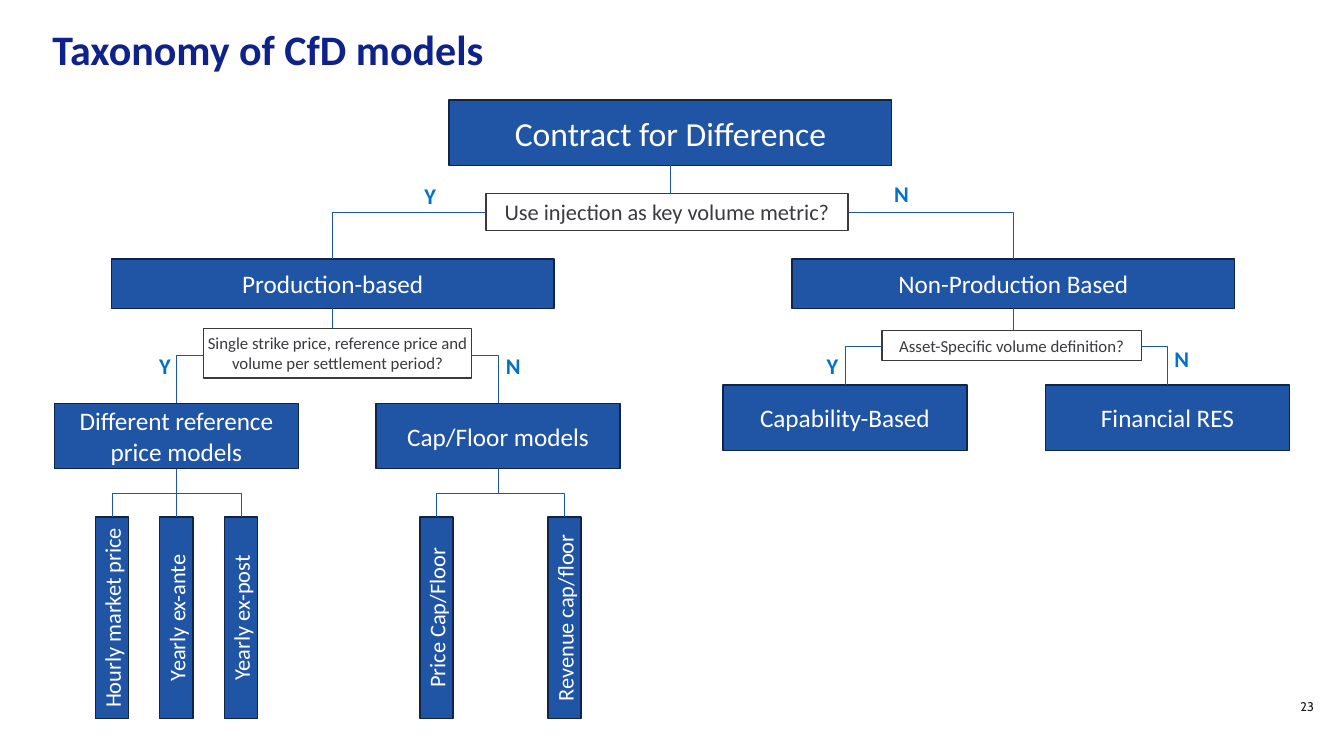
import pptx
import pptx.util
import pptx.dml.color
import pptx.enum.shapes
import pptx.enum.text
from pptx.util import Inches

TITLE = "Taxonomy of CfD models"
PAGE_NUMBER = "23"
FONT = "Calibri"
COLORS = {
    "title": "0F218B", "box": "2054A5", "box_line": "0E2548", "box_text": "FFFFFF",
    "question": "FFFFFF", "question_line": "3A3A3A", "question_text": "3A3A3F",
    "answer": "0073C8", "number": "1D1D20",
}

# level: width and height as seen, font size, rotation
LEVELS = {
    "root": (4.39, 0.65, 24, 0),
    "branch": (4.39, 0.49, 18, 0),
    "model": (2.42, 0.65, 18, 0),
    "variant": (0.33, 2, 16, 270),
}
# text, level, centre x, top, parent
NODES = [
    ("Contract for Difference", "root", 6.65, 0.99, None),
    ("Production-based", "branch", 3.3, 2.57, "Contract for Difference"),
    ("Non-Production Based", "branch", 10.05, 2.57, "Contract for Difference"),
    ("Different reference price models", "model", 1.75, 4, "Production-based"),
    ("Cap/Floor models", "model", 4.94, 4, "Production-based"),
    ("Capability-Based", "model", 8.38, 3.82, "Non-Production Based"),
    ("Financial RES", "model", 11.58, 3.82, "Non-Production Based"),
    ("Hourly market price", "variant", 1.11, 5.13, "Different reference price models"),
    ("Yearly ex-ante", "variant", 1.75, 5.13, "Different reference price models"),
    ("Yearly ex-post", "variant", 2.39, 5.13, "Different reference price models"),
    ("Price Cap/Floor", "variant", 4.33, 5.13, "Cap/Floor models"),
    ("Revenue cap/floor", "variant", 5.6, 5.13, "Cap/Floor models"),
]
# text, box, font size, inset (None keeps the default), (Y left, top), (N left, top)
QUESTIONS = [
    ("Use injection as key volume metric?", (4.82, 1.92, 3.59, 0.37), 16, None,
     (4.11, 1.76), (8.77, 1.74)),
    ("Single strike price, reference price and volume per settlement period?",
     (2.02, 3.26, 2.66, 0.49), 12, 0.04, (1.48, 3.44), (4.92, 3.44)),
    ("Asset-Specific volume definition?", (8.75, 3.28, 2.57, 0.3), 12, None,
     (8.1, 3.44), (11.55, 3.38)),
]

ALIGN = pptx.enum.text.PP_ALIGN
ANCHOR = pptx.enum.text.MSO_ANCHOR


def color(name):
    return pptx.dml.color.RGBColor.from_string(COLORS[name])


def write(shape, text, size, color_name, align, bold=False, font=FONT):
    paragraph = shape.text_frame.paragraphs[0]
    paragraph.alignment = align
    run = paragraph.add_run()
    run.text = text
    run.font.name = font
    run.font.size = pptx.util.Pt(size)
    run.font.bold = bold
    run.font.color.rgb = color(color_name)
    return paragraph


def add_box(slide, box, text, size, style):
    shape = slide.shapes.add_shape(pptx.enum.shapes.MSO_SHAPE.RECTANGLE, *map(Inches, box))
    shape.shadow.inherit = False
    shape.fill.solid()
    shape.fill.fore_color.rgb = color(style)
    shape.line.color.rgb = color(style + "_line")
    shape.line.width = pptx.util.Pt(1)
    shape.text_frame.word_wrap = True
    write(shape, text, size, style + "_text", ALIGN.CENTER)
    return shape


def add_text(slide, box, *style, wrap, **options):
    shape = slide.shapes.add_textbox(*map(Inches, box))
    shape.text_frame.word_wrap = wrap
    write(shape, *style, **options)
    return shape


def add_node(slide, text, level, centre, top):
    width, height, size, rotation = LEVELS[level]
    middle = top + height / 2
    if rotation:
        width, height = height, width
    shape = add_box(slide, (centre - width / 2, middle - height / 2, width, height),
                    text, size, "box")
    shape.rotation = rotation
    return shape


def add_branch(slide, parent, child, start, end):
    """Draw an elbow that leaves the parent downwards: a sideways elbow, turned."""
    (x1, y1), (x2, y2) = start, end
    connector = slide.shapes.add_connector(
        pptx.enum.shapes.MSO_CONNECTOR.ELBOW, 0, 0, 0, 0)
    connector.begin_connect(parent, 2)
    connector.end_connect(child, 3 if child.rotation else 0)
    centre_x, centre_y = (x1 + x2) / 2, (y1 + y2) / 2
    side = 1 if x2 < x1 else -1
    half_width, half_height = side * (y2 - y1) / 2, abs(x2 - x1) / 2
    connector.begin_x = Inches(centre_x - half_width)
    connector.begin_y = Inches(centre_y - half_height)
    connector.end_x = Inches(centre_x + half_width)
    connector.end_y = Inches(centre_y + half_height)
    properties = connector._element.spPr
    properties.xfrm.set("rot", str(60000 * (90 if side == 1 else 270)))
    connector.line.color.rgb = color("box")
    connector.line.width = pptx.util.Pt(0.5)
    properties.append(pptx.oxml.parse_xml(
        '<a:effectLst xmlns:a="http://schemas.openxmlformats.org/drawingml/2006/main"/>'))


def add_question(slide, text, box, size, inset, yes, no):
    frame = add_box(slide, box, text, size, "question").text_frame
    frame.vertical_anchor = ANCHOR.TOP
    frame.auto_size = pptx.enum.text.MSO_AUTO_SIZE.SHAPE_TO_FIT_TEXT
    if inset is not None:
        frame.margin_left = frame.margin_right = Inches(inset)
        frame.margin_top = frame.margin_bottom = Inches(inset)
    for answer, place, width in (("Y", yes, 0.32), ("N", no, 0.35)):
        add_text(slide, (*place, width, 0.37), answer, 16, "answer", ALIGN.LEFT,
                 wrap=False, bold=True)


def main():
    presentation = pptx.Presentation()
    presentation.slide_width, presentation.slide_height = Inches(13.33), Inches(7.5)
    slide = presentation.slides.add_slide(presentation.slide_layouts[5])

    title = slide.shapes.title
    title.left, title.top, title.width, title.height = map(Inches, (0.42, 0.32, 12.71, 0.39))
    title.text_frame.vertical_anchor = ANCHOR.MIDDLE
    title.text_frame.auto_size = pptx.enum.text.MSO_AUTO_SIZE.NONE
    paragraph = write(title, TITLE, 30, "title", ALIGN.LEFT, bold=True)
    paragraph.line_spacing = pptx.util.Pt(32)

    shapes, tops, bottoms = {}, {}, {}
    for text, level, centre, top, _ in NODES:
        shapes[text] = add_node(slide, text, level, centre, top)
        tops[text] = centre, top
        bottoms[text] = centre, top + LEVELS[level][1]
    for text, _, _, _, parent in NODES:
        if parent:
            add_branch(slide, shapes[parent], shapes[text], bottoms[parent], tops[text])
    for question in QUESTIONS:
        add_question(slide, *question)

    number = add_text(slide, (6.75, 6.82, 6.38, 0.4), PAGE_NUMBER, 9, "number",
                      ALIGN.RIGHT, wrap=True, font="Cabin")
    number.text_frame.vertical_anchor = ANCHOR.MIDDLE
    number.text_frame.paragraphs[0].line_spacing = pptx.util.Pt(9)
    presentation.save("out.pptx")


if __name__ == "__main__":
    main()
